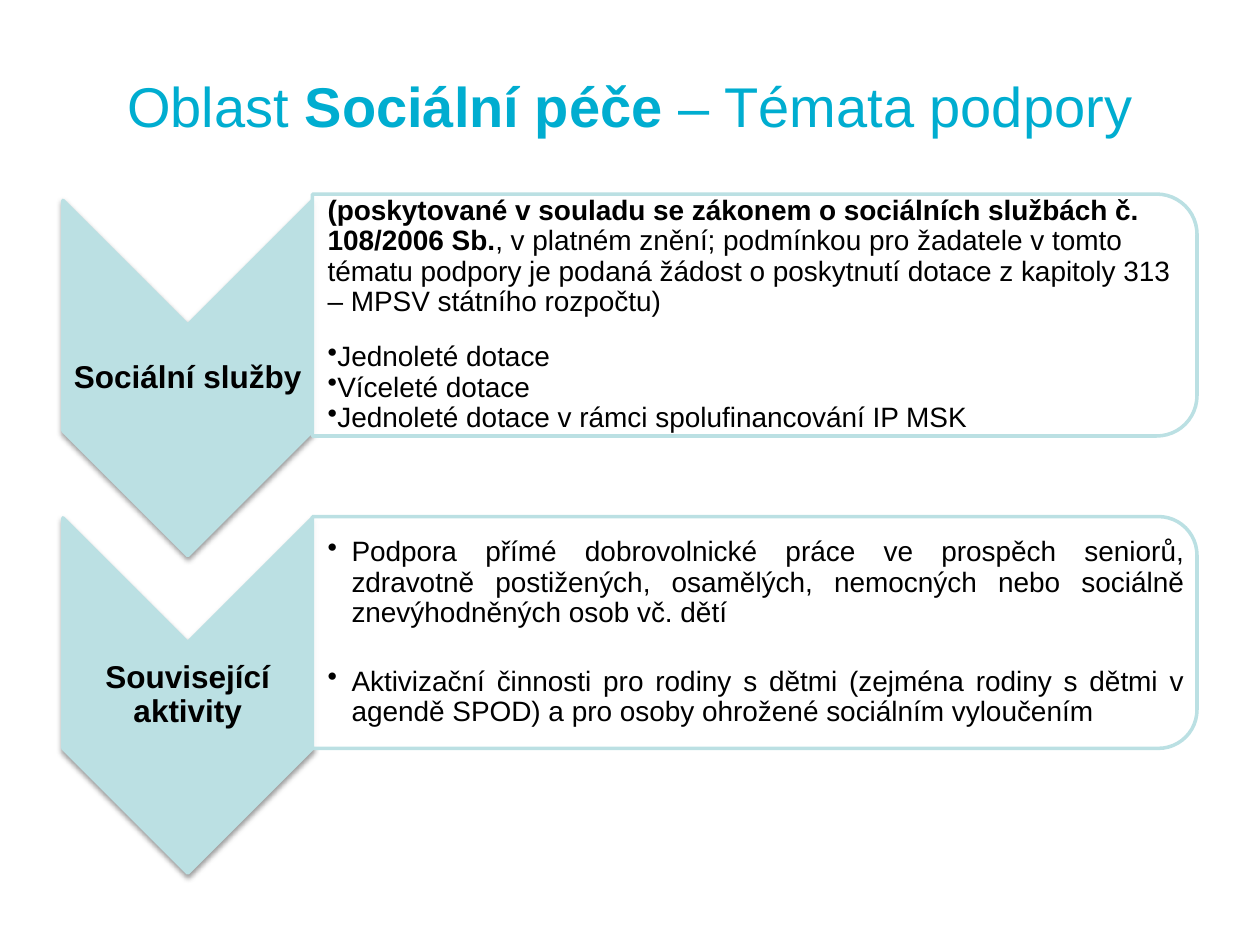
from dataclasses import dataclass

from lxml.etree import SubElement
from pptx import Presentation
from pptx.dml.color import RGBColor
from pptx.enum.shapes import MSO_SHAPE
from pptx.enum.text import MSO_ANCHOR, PP_ALIGN
from pptx.oxml.ns import qn
from pptx.util import Inches, Pt


@dataclass(frozen=True)
class Theme:
    """Colours, font and type sizes of the slide."""
    title: RGBColor = RGBColor(0x00, 0xAD, 0xD0)
    accent: RGBColor = RGBColor(0xBB, 0xE0, 0xE3)
    panel: RGBColor = RGBColor(0xFF, 0xFF, 0xFF)
    text: RGBColor = RGBColor(0x00, 0x00, 0x00)
    font: str = "Arial"
    title_size: Pt = Pt(32)
    label_size: Pt = Pt(18)
    body_size: Pt = Pt(16)
    outline: Pt = Pt(2)


THEME = Theme()
TITLE_FONT = {"name": THEME.font, "size": THEME.title_size}
LABEL_FONT = {"name": THEME.font, "size": THEME.label_size, "bold": True}
BODY_FONT = {"name": THEME.font, "size": THEME.body_size}
CENTERED = {"alignment": PP_ALIGN.CENTER}
TIGHT = {"line_spacing": 0.9}
JUSTIFIED = {**TIGHT, "alignment": PP_ALIGN.JUSTIFY}
SMALL_INSET = Inches(0.01)
LABEL_FRAME = dict.fromkeys(
    ("margin_left", "margin_top", "margin_right", "margin_bottom"), SMALL_INSET)
BODY_FRAME = {**LABEL_FRAME, "margin_left": Inches(0.12)}

CHEVRON_LENGTH, CHEVRON_WIDTH = 2.82, 1.98
CHEVRON_LEFT, PANEL_LEFT, PANEL_WIDTH = 0.5, 2.48, 7.02
TEXT_WIDTH = 6.93
LABEL_HEIGHT = 0.85
FIRST_CHEVRON_TOP, ROW_PITCH = 1.59, 2.52

TITLE = [("Oblast ", False), ("Sociální péče ", True), ("– Témata podpory", False)]
SERVICES = [
    {"runs": [
        ("(poskytované v souladu se zákonem o sociálních službách č. 108/2006 Sb.", True),
        (", v platném znění; podmínkou pro žadatele v tomto tématu podpory "
         "je podaná žádost o poskytnutí dotace z kapitoly 313 – MPSV státního rozpočtu)", False),
    ], "format": {**TIGHT, "space_after": Pt(14.5)}},
    *({"runs": [(text, False)], "format": TIGHT, "indent": 0} for text in (
        "Jednoleté dotace",
        "Víceleté dotace",
        "Jednoleté dotace v rámci spolufinancování IP MSK",
    )),
]
ACTIVITIES = [
    {"runs": [("Podpora přímé dobrovolnické práce ve prospěch seniorů, zdravotně "
               "postižených, osamělých, nemocných nebo sociálně znevýhodněných "
               "osob vč. dětí", False)],
     "format": {**JUSTIFIED, "space_after": Pt(22)}, "indent": 0.19},
    {"runs": [("Aktivizační činnosti pro rodiny s dětmi (zejména rodiny s dětmi v "
               "agendě SPOD) a pro osoby ohrožené sociálním vyloučením", False)],
     "format": JUSTIFIED, "indent": 0.19},
]
ROWS = [
    {"label": "Sociální služby", "body": SERVICES, "panel_top": 1.54,
     "panel_height": 1.92, "text_height": 1.73},
    {"label": "Související aktivity", "body": ACTIVITIES, "panel_top": 4.1,
     "panel_height": 1.84, "text_height": 1.66},
]


def apply_format(target, values):
    """Set each named attribute of the target."""
    for name, value in values.items():
        setattr(target, name, value)


def add_bullet(paragraph, indent):
    """Give the paragraph a round bullet with a hanging indent in inches."""
    properties = paragraph._p.get_or_add_pPr()
    properties.set("marL", str(Inches(indent)))
    properties.set("indent", str(-Inches(indent)))
    SubElement(properties, qn("a:buChar"), char="•")


def add_text(slide, box, paragraphs, font, color, frame_format):
    """Add a wrapped, vertically centred text box."""
    frame = slide.shapes.add_textbox(*map(Inches, box)).text_frame
    apply_format(frame, {"word_wrap": True, "vertical_anchor": MSO_ANCHOR.MIDDLE,
                         **frame_format})
    for index, content in enumerate(paragraphs):
        paragraph = frame.add_paragraph() if index else frame.paragraphs[0]
        apply_format(paragraph, content["format"])
        if "indent" in content:
            add_bullet(paragraph, content["indent"])
        for text, bold in content["runs"]:
            run = paragraph.add_run()
            run.text = text
            apply_format(run.font, {**font, "bold": bold})
            run.font.color.rgb = color


def add_turned_shape(slide, kind, box, fill):
    """Add an outlined shape turned by 90 degrees that covers the visible box."""
    left, top, width, height = box
    offset = (width - height) / 2
    shape = slide.shapes.add_shape(
        kind, *map(Inches, (left + offset, top - offset, height, width)))
    shape.rotation = 90
    shape.shadow.inherit = False
    shape.fill.solid()
    shape.fill.fore_color.rgb = fill
    shape.line.color.rgb = THEME.accent
    shape.line.width = THEME.outline
    return shape


def add_chevron(slide, top, label):
    """Add a shadowed downward chevron with its label."""
    shape = add_turned_shape(slide, MSO_SHAPE.CHEVRON,
                             (CHEVRON_LEFT, top, CHEVRON_WIDTH, CHEVRON_LENGTH), THEME.accent)
    effects = shape._element.spPr.find(qn("a:effectLst"))
    shadow = SubElement(effects, qn("a:outerShdw"), blurRad=str(Pt(3.1)),
                        dist=str(Pt(1.6)), dir="5400000", rotWithShape="0")
    color = SubElement(shadow, qn("a:srgbClr"), val=str(THEME.text))
    SubElement(color, qn("a:alpha"), val="38000")
    label_top = top + (CHEVRON_LENGTH - LABEL_HEIGHT) / 2
    add_text(slide, (CHEVRON_LEFT, label_top, CHEVRON_WIDTH, LABEL_HEIGHT),
             [{"runs": [(label, True)], "format": {**CENTERED, **TIGHT}}],
             LABEL_FONT, THEME.text, LABEL_FRAME)


def add_panel(slide, row):
    """Add a panel rounded on the right with its body text."""
    top, height, text_height = row["panel_top"], row["panel_height"], row["text_height"]
    shape = add_turned_shape(slide, MSO_SHAPE.ROUND_2_SAME_RECTANGLE,
                             (PANEL_LEFT, top, PANEL_WIDTH, height), THEME.panel)
    color = shape._element.spPr.find(qn("a:solidFill")).find(qn("a:srgbClr"))
    SubElement(color, qn("a:alpha"), val="90000")
    text_top = top + (height - text_height) / 2
    add_text(slide, (PANEL_LEFT, text_top, TEXT_WIDTH, text_height),
             row["body"], BODY_FONT, THEME.text, BODY_FRAME)


def main():
    """Build and save the slide."""
    presentation = Presentation()
    presentation.slide_width, presentation.slide_height = Inches(10), Inches(7.5)
    slide = presentation.slides.add_slide(presentation.slide_layouts[6])
    add_text(slide, (0.25, 0.21, 9.5, 1.25), [{"runs": TITLE, "format": CENTERED}],
             TITLE_FONT, THEME.title, {})
    for index, row in enumerate(ROWS):
        add_chevron(slide, FIRST_CHEVRON_TOP + index * ROW_PITCH, row["label"])
        add_panel(slide, row)
    presentation.save("out.pptx")


if __name__ == "__main__":
    main()
